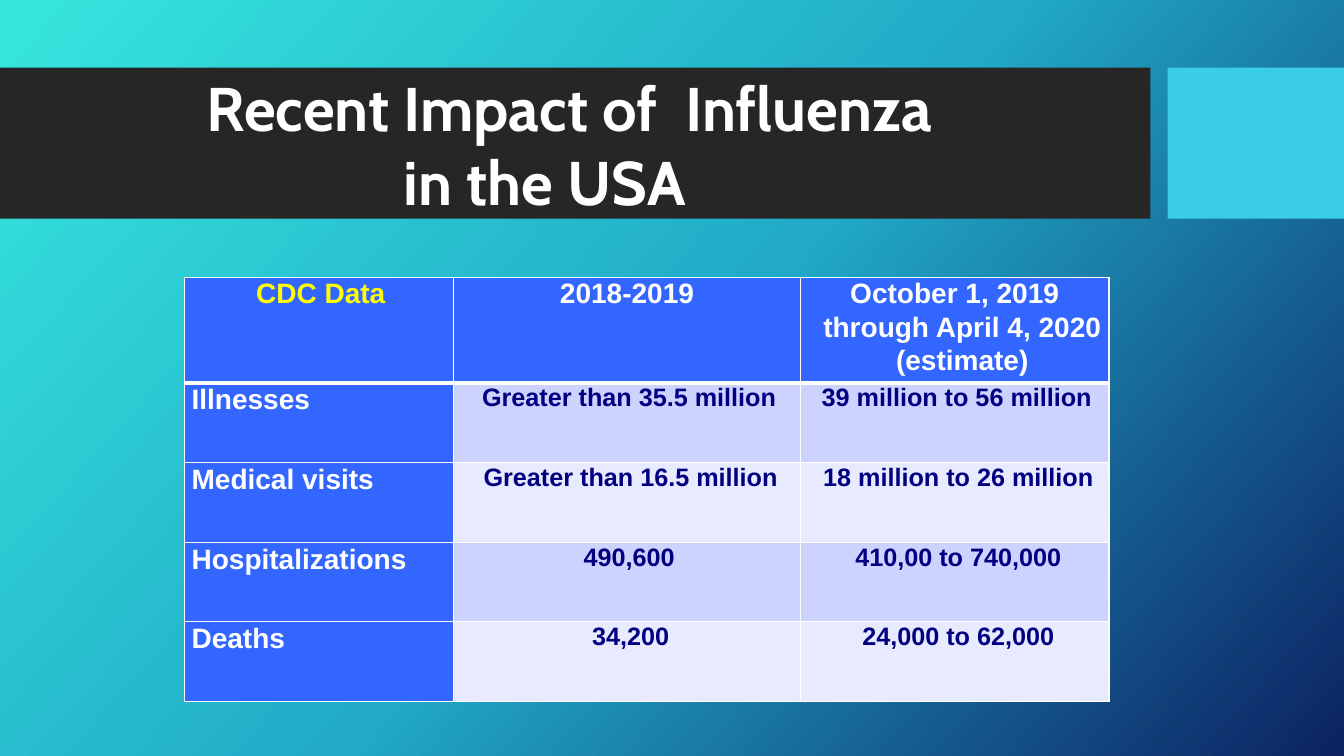
import pptx
import pptx.dml.color
import pptx.enum.shapes
import pptx.enum.text
import pptx.oxml
import pptx.oxml.ns
import pptx.util
from pptx.util import Inches

RGBColor = pptx.dml.color.RGBColor
ALIGN = pptx.enum.text.PP_ALIGN
ANCHOR = pptx.enum.text.MSO_ANCHOR
qn = pptx.oxml.ns.qn

WHITE = RGBColor(0xFF, 0xFF, 0xFF)
YELLOW = RGBColor(0xFF, 0xFF, 0x00)
NAVY = RGBColor(0x00, 0x00, 0x80)
BLUE = RGBColor(0x33, 0x66, 0xFF)
BAND_COLORS = (RGBColor(0xCD, 0xD3, 0xFF), RGBColor(0xE8, 0xEA, 0xFF))
DARK_BAR = RGBColor(0x26, 0x26, 0x26)
CYAN_BAR = RGBColor(0x39, 0xCD, 0xE7)
BACKGROUND_STOPS = (
    (0, RGBColor(0x36, 0xE6, 0xDD)),
    (50, RGBColor(0x21, 0xAB, 0xC8)),
    (100, RGBColor(0x0C, 0x22, 0x63)),
)

COLUMN_WIDTHS = (2.67, 3.44, 3.06)
ROW_HEIGHTS = (1.05, 0.79, 0.79, 0.79, 0.79)
TABLE_ROWS = (
    ("CDC Data", "2018-2019",
     "October 1, 2019\nthrough April 4, 2020 (estimate)"),
    ("Illnesses", "Greater than 35.5 million", "39 million to 56 million"),
    ("Medical visits", "Greater than 16.5 million", "18 million to 26 million"),
    ("Hospitalizations", "490,600", "410,00 to 740,000"),
    ("Deaths", "34,200", "24,000 to 62,000"),
)
VALUE_INDENTS = ((0.04, 0.04), (0.07, 0.07), (0.04, 0.07), (0.07, 0.07))

TITLE_FONT = {"name": "Cabin", "size": pptx.util.Pt(44), "bold": True}
LABEL_FONT = {"name": "Arial", "size": pptx.util.Pt(20), "bold": True}
VALUE_FONT = {"name": "Arial", "size": pptx.util.Pt(18), "bold": True}
LABEL_SPACING = pptx.util.Pt(23.3)
VALUE_SPACING = pptx.util.Pt(20.9)
NO_MARGINS = dict.fromkeys(
    ("margin_left", "margin_top", "margin_right", "margin_bottom"), 0)


def set_attributes(target, values):
    for name, value in values.items():
        setattr(target, name, value)


def format_paragraph(paragraph, font, color, alignment, left=0, first=0):
    properties = paragraph._p.get_or_add_pPr()
    properties.set("marL", str(Inches(left)))
    properties.set("indent", str(Inches(first)))
    paragraph.alignment = alignment
    set_attributes(paragraph.font, font)
    paragraph.font.color.rgb = color


def paint_background(slide):
    fill = slide.background.fill
    fill.gradient()
    fill.gradient_angle = 318
    stop_list = next(slide._element.iter(qn("a:gsLst")))
    for stop in list(stop_list):
        stop_list.remove(stop)
    for percent, color in BACKGROUND_STOPS:
        stop_list.append(pptx.oxml.parse_xml(
            f'<a:gs {pptx.oxml.ns.nsdecls("a")} pos="{percent * 1000}">'
            f'<a:srgbClr val="{color}"/></a:gs>'))


def add_bar(slide, left, width, color):
    bar = slide.shapes.add_shape(
        pptx.enum.shapes.MSO_SHAPE.RECTANGLE,
        Inches(left), Inches(0.67), Inches(width), Inches(1.5))
    bar.shadow.inherit = False
    bar.fill.solid()
    bar.fill.fore_color.rgb = color
    bar.line.fill.background()


def set_title(slide, text):
    title = slide.shapes.title
    set_attributes(title, {"left": Inches(-0.17), "top": Inches(0.67),
                           "width": Inches(9.67), "height": Inches(1.5)})
    frame = title.text_frame
    frame.text = text
    set_attributes(frame, NO_MARGINS | {
        "margin_top": Inches(0.01), "word_wrap": True,
        "vertical_anchor": ANCHOR.MIDDLE,
        "auto_size": pptx.enum.text.MSO_AUTO_SIZE.NONE})
    format_paragraph(frame.paragraphs[0], TITLE_FONT, WHITE, ALIGN.CENTER,
                     1.48, 0.49)
    # Bring the title in front of the bars
    slide.shapes._spTree.append(title._element)


def set_borders(cell, top, bottom):
    properties = cell._tc.get_or_add_tcPr()
    widths = {"lnL": 1, "lnR": 1, "lnT": top, "lnB": bottom}
    for position, (side, points) in enumerate(widths.items()):
        properties.insert(position, pptx.oxml.parse_xml(
            f'<a:{side} {pptx.oxml.ns.nsdecls("a")} w="{points * 12700}">'
            f'<a:solidFill><a:srgbClr val="{WHITE}"/></a:solidFill></a:{side}>'))


def fill_cell(cell, row, column, text):
    is_header, is_label = row == 0, column == 0
    cell.text = text
    set_attributes(cell, NO_MARGINS | {"vertical_anchor": ANCHOR.TOP})
    cell.fill.solid()
    cell.fill.fore_color.rgb = (
        BLUE if is_header or is_label else BAND_COLORS[(row - 1) % 2])
    set_borders(cell, 3 if row == 1 else 1, 3 if is_header else 1)

    # Text style follows from the place in the table
    if is_header:
        font, color = LABEL_FONT, YELLOW if is_label else WHITE
        indent = 0.71 if is_label else 0
    elif is_label:
        font, color, indent = LABEL_FONT, WHITE, 0.07
    else:
        font, color = VALUE_FONT, NAVY
        indent = VALUE_INDENTS[row - 1][column - 1]
    alignment = ALIGN.LEFT if is_label else ALIGN.CENTER
    for number, paragraph in enumerate(cell.text_frame.paragraphs):
        format_paragraph(paragraph, font, color, alignment,
                         indent if number == 0 else 0.15)
        paragraph.line_spacing = (
            1.07 if number else
            LABEL_SPACING if font is LABEL_FONT else VALUE_SPACING)


def add_data_table(slide):
    table = slide.shapes.add_table(
        len(ROW_HEIGHTS), len(COLUMN_WIDTHS), Inches(1.83), Inches(2.75),
        Inches(sum(COLUMN_WIDTHS)), Inches(sum(ROW_HEIGHTS))).table
    set_attributes(table, {"first_row": False, "horz_banding": False})
    for column, width in zip(table.columns, COLUMN_WIDTHS):
        column.width = Inches(width)
    for row, height in zip(table.rows, ROW_HEIGHTS):
        row.height = Inches(height)
    for row, texts in enumerate(TABLE_ROWS):
        for column, text in enumerate(texts):
            fill_cell(table.cell(row, column), row, column, text)


def main():
    presentation = pptx.Presentation()
    presentation.slide_width = Inches(13.33)
    presentation.slide_height = Inches(7.5)
    slide = presentation.slides.add_slide(presentation.slide_layouts[5])

    # Backdrop and title band
    paint_background(slide)
    add_bar(slide, 0, 11.41, DARK_BAR)
    add_bar(slide, 11.58, 1.75, CYAN_BAR)
    set_title(slide, "Recent Impact of  Influenza in the USA")

    # Influenza figures
    add_data_table(slide)
    presentation.save("out.pptx")


if __name__ == "__main__":
    main()
